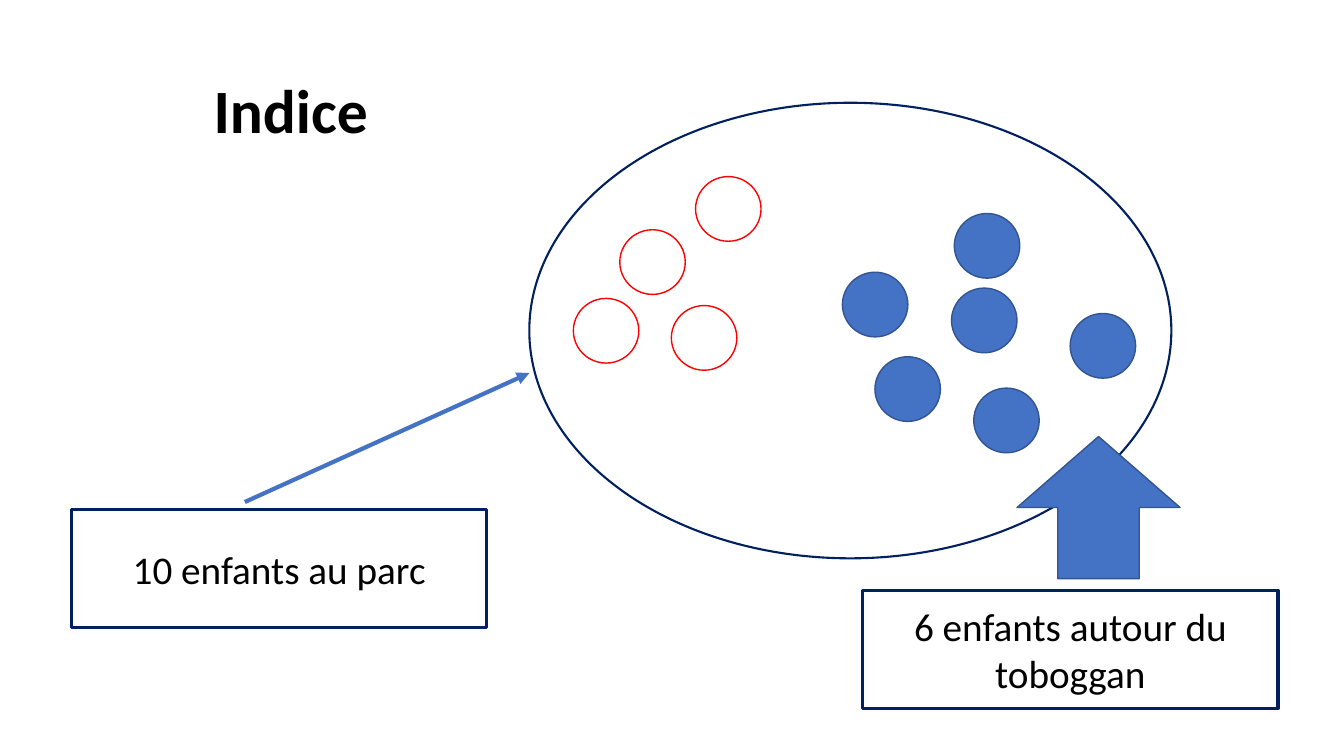
import pptx
import pptx.util
import pptx.dml.color
import pptx.enum.shapes
import pptx.enum.text
import pptx.oxml
import pptx.oxml.ns
from pptx.util import Cm

MSO = pptx.enum.shapes.MSO_SHAPE
ANCHOR = pptx.enum.text.MSO_ANCHOR
ALIGN = pptx.enum.text.PP_ALIGN

THEME = {
    "font": "Calibri", "title": 44, "label": 28,
    "black": "000000", "white": "FFFFFF", "navy": "002060",
    "blue": "4472C4", "dark_blue": "325491", "red": "FF0000",
}


def rgb(name):
    return pptx.dml.color.RGBColor.from_string(THEME[name])


def add_outlined(kind, box, fill, line, width):
    sp = slide.shapes.add_shape(kind, *map(Cm, box))
    sp.shadow.inherit = False
    sp.fill.solid()
    sp.fill.fore_color.rgb = rgb(fill)
    sp.line.color.rgb = rgb(line)
    sp.line.width = pptx.util.Pt(width)
    return sp


prs = pptx.Presentation()
prs.slide_width, prs.slide_height = Cm(33.87), Cm(19.05)
slide = prs.slides.add_slide(prs.slide_layouts[6])

# Title, with a wider right inset that moves it left of centre
title = slide.shapes.add_textbox(Cm(2.34), Cm(1.02), Cm(10.74), Cm(3.68))
title.text_frame.margin_right = Cm(1.01)

# Park
add_outlined(MSO.OVAL, (13.34, 2.59, 16.18, 11.48), "white", "navy", 1.5)

# Children: blue ones near the slide, red ones elsewhere
children = {
    ("blue", "dark_blue"): [(22.05, 8.99), (21.23, 6.86), (24.05, 5.38),
                            (26.97, 7.9), (24.54, 9.78), (23.98, 7.26)],
    ("white", "red"): [(15.62, 5.79), (14.45, 7.52), (17.53, 4.45), (16.92, 7.7)],
}
for (fill, line), spots in children.items():
    for x, y in spots:
        add_outlined(MSO.OVAL, (x, y, 1.65, 1.63), fill, line, 1)

# Label boxes
park_label = add_outlined(MSO.RECTANGLE, (1.8, 12.85, 10.47, 2.97), "white", "navy", 2.25)
toboggan_label = add_outlined(MSO.RECTANGLE, (21.74, 14.88, 10.47, 2.97), "white", "navy", 2.25)

# Arrow from the first label to the park
cx = slide.shapes.add_connector(pptx.enum.shapes.MSO_CONNECTOR.STRAIGHT,
                                Cm(6.17), Cm(12.65), Cm(13.34), Cm(9.4))
cx.line.color.rgb = rgb("blue")
cx.line.width = pptx.util.Pt(3)
ns = pptx.oxml.ns.nsdecls("a")
cx.line._get_or_add_ln().append(pptx.oxml.parse_xml(f'<a:tailEnd {ns} type="triangle"/>'))
cx._element.spPr.append(pptx.oxml.parse_xml(f"<a:effectLst {ns}/>"))

# Block arrow above the second label
add_outlined(MSO.UP_ARROW, (25.63, 11, 4.11, 3.58), "blue", "dark_blue", 1)

# Wording
texts = [
    (title, "Indice", "title", True, 0.9),
    (park_label, "10 enfants au parc", "label", False, 1.0),
    (toboggan_label, "6 enfants autour du toboggan", "label", False, 1.0),
]
for sp, text, size, bold, spacing in texts:
    tf = sp.text_frame
    p = tf.paragraphs[0]
    r = p.add_run()
    r.text = text
    r.font.color.rgb = rgb("black")
    formats = [
        (tf, {"word_wrap": True, "vertical_anchor": ANCHOR.MIDDLE}),
        (p, {"alignment": ALIGN.CENTER, "line_spacing": spacing}),
        (r.font, {"name": THEME["font"], "size": pptx.util.Pt(THEME[size]), "bold": bold}),
    ]
    for target, values in formats:
        for key, value in values.items():
            setattr(target, key, value)

prs.save("out.pptx")
